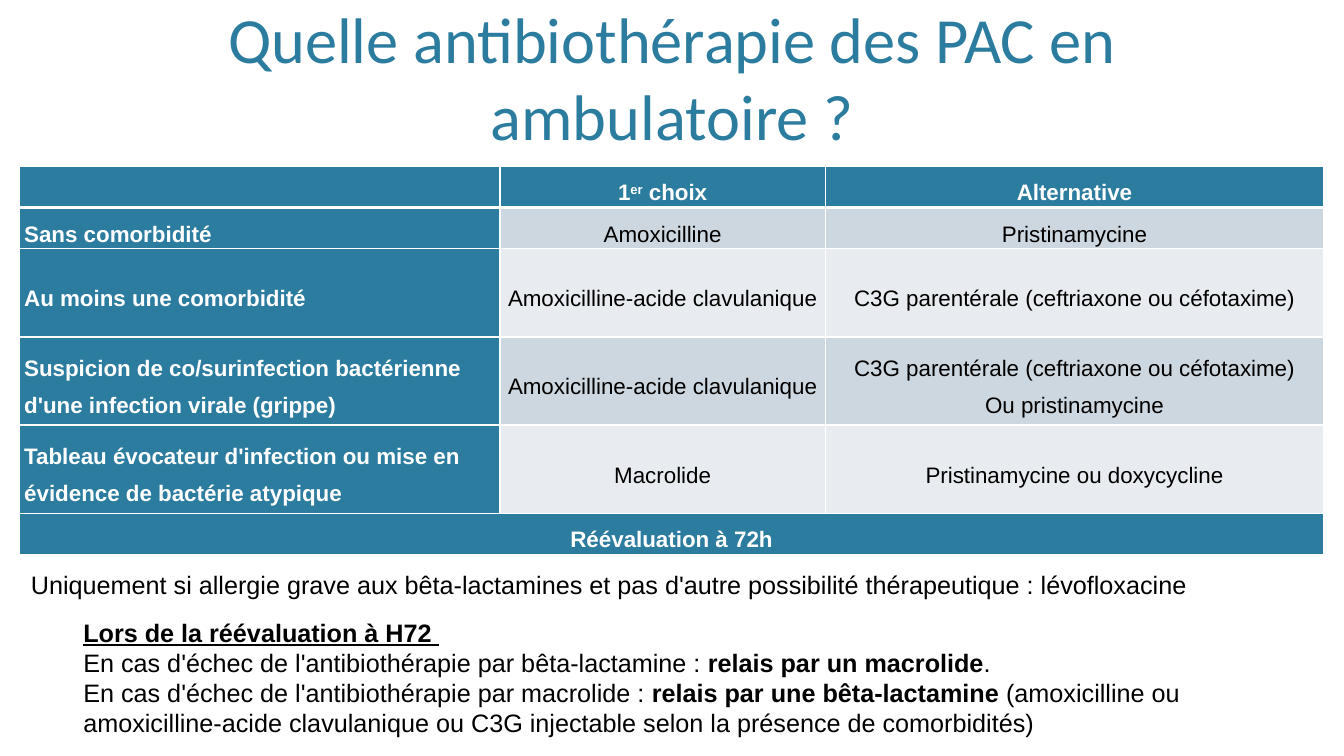
from dataclasses import dataclass

from lxml.etree import SubElement
from pptx import Presentation
from pptx.dml.color import RGBColor
from pptx.enum.text import MSO_ANCHOR, PP_ALIGN
from pptx.oxml.ns import qn
from pptx.util import Cm, Pt


@dataclass(frozen=True)
class Theme:
    teal: str = "2C7C9F"
    white: str = "FFFFFF"
    black: str = "000000"
    bands: tuple = ("CDD7DF", "E8ECF0")
    title_font: str = "Calibri"
    body_font: str = "Arial"
    title_size: int = 46
    body_size: int = 18
    table_size: int = 16


THEME = Theme()

TITLE = "Quelle antibiothérapie des PAC en ambulatoire ?"
ALLERGY_NOTE = (
    "Uniquement si allergie grave aux bêta-lactamines et pas d'autre "
    "possibilité thérapeutique : lévofloxacine"
)
# A paragraph is a list of (text, marks): b bold, u underlined, s superscript.
REASSESSMENT = [
    [("Lors de la réévaluation à H72 ", "bu")],
    [
        ("En cas d'échec de l'antibiothérapie par bêta-lactamine : ", ""),
        ("relais par un macrolide", "b"),
        (".", ""),
    ],
    [
        ("En cas d'échec de l'antibiothérapie par macrolide : ", ""),
        ("relais par une bêta-lactamine ", "b"),
        ("(amoxicilline ou amoxicilline-acide clavulanique ou C3G injectable "
         "selon la présence de comorbidités)", ""),
    ],
]

HEADINGS = [[], [[("1", "b"), ("er", "bs"), (" choix", "b")]], [[("Alternative", "b")]]]
TREATMENTS = [
    ("Sans comorbidité", "Amoxicilline", "Pristinamycine"),
    ("Au moins une comorbidité", "Amoxicilline-acide clavulanique",
     "C3G parentérale (ceftriaxone ou céfotaxime)"),
    ("Suspicion de co/surinfection bactérienne d'une infection virale (grippe)",
     "Amoxicilline-acide clavulanique",
     "C3G parentérale (ceftriaxone ou céfotaxime)\nOu pristinamycine"),
    ("Tableau évocateur d'infection ou mise en évidence de bactérie atypique",
     "Macrolide", "Pristinamycine ou doxycycline"),
]
FOOTER = "Réévaluation à 72h"
COLUMN_WIDTHS = (12.11, 8.2, 12.56)
SHORT_ROW, TALL_ROW = 1.04, 2.22
ROW_HEIGHTS = (SHORT_ROW, SHORT_ROW, TALL_ROW, TALL_ROW, TALL_ROW, SHORT_ROW)
THIN, THICK = 1, 3


def plain(text, marks=""):
    return [[(line, marks)] for line in text.split("\n")]


def write_paragraphs(frame, paragraphs, font, size, color, align=PP_ALIGN.LEFT, spacing=1.0):
    for index, pieces in enumerate(paragraphs):
        para = frame.add_paragraph() if index else frame.paragraphs[0]
        para.alignment = align
        para.line_spacing = spacing
        for text, marks in pieces:
            span = para.add_run()
            span.text = text
            span.font.name = font
            span.font.size = Pt(size)
            span.font.color.rgb = RGBColor.from_string(color)
            span.font.bold = "b" in marks
            span.font.underline = "u" in marks
            if "s" in marks:
                span._r.get_or_add_rPr().set("baseline", "30000")


def add_text(page, place, paragraphs, font=THEME.body_font, size=THEME.body_size,
             color=THEME.black, align=PP_ALIGN.LEFT, anchor=MSO_ANCHOR.TOP):
    box = page.shapes.add_textbox(*(Cm(length) for length in place))
    box.text_frame.word_wrap = True
    box.text_frame.vertical_anchor = anchor
    write_paragraphs(box.text_frame, paragraphs, font, size, color, align)


def set_borders(cell, top, bottom):
    properties = cell._tc.get_or_add_tcPr()
    for side, width in (("L", THIN), ("R", THIN), ("T", top), ("B", bottom)):
        line = SubElement(properties, qn(f"a:ln{side}"), w=str(Pt(width)))
        fill = SubElement(line, qn("a:solidFill"))
        SubElement(fill, qn("a:srgbClr"), val=THEME.white)


def fill_cell(cell, paragraphs, fill, color, align=PP_ALIGN.CENTER, top=THIN, bottom=THIN):
    set_borders(cell, top, bottom)
    cell.fill.solid()
    cell.fill.fore_color.rgb = RGBColor.from_string(fill)
    cell.margin_left = cell.margin_right = Cm(0.12)
    cell.margin_top = cell.margin_bottom = 0
    cell.vertical_anchor = MSO_ANCHOR.MIDDLE
    write_paragraphs(cell.text_frame, paragraphs, THEME.body_font, THEME.table_size,
                     color, align, spacing=1.5)


def add_treatment_table(page, left, top):
    frame = page.shapes.add_table(
        len(ROW_HEIGHTS), len(COLUMN_WIDTHS), Cm(left), Cm(top),
        Cm(sum(COLUMN_WIDTHS)), Cm(sum(ROW_HEIGHTS)))
    table = frame.table
    for column, width in zip(table.columns, COLUMN_WIDTHS):
        column.width = Cm(width)
    for row, height in zip(table.rows, ROW_HEIGHTS):
        row.height = Cm(height)

    for column, heading in enumerate(HEADINGS):
        fill_cell(table.cell(0, column), heading, THEME.teal, THEME.white, bottom=THICK)

    for row, (situation, *choices) in enumerate(TREATMENTS, start=1):
        top_line = THICK if row == 1 else THIN
        fill_cell(table.cell(row, 0), plain(situation, "b"), THEME.teal, THEME.white,
                  PP_ALIGN.LEFT, top_line)
        band = THEME.bands[(row - 1) % 2]
        for column, choice in enumerate(choices, start=1):
            fill_cell(table.cell(row, column), plain(choice), band, THEME.black, top=top_line)

    last = len(ROW_HEIGHTS) - 1
    table.cell(last, 0).merge(table.cell(last, len(COLUMN_WIDTHS) - 1))
    fill_cell(table.cell(last, 0), plain(FOOTER, "b"), THEME.teal, THEME.white)


def main():
    deck = Presentation()
    deck.slide_width, deck.slide_height = Cm(33.87), Cm(19.05)
    page = deck.slides.add_slide(deck.slide_layouts[6])
    add_text(page, (2.03, 0.3, 29.8, 3.7), plain(TITLE), THEME.title_font,
             THEME.title_size, THEME.teal, PP_ALIGN.CENTER, MSO_ANCHOR.BOTTOM)
    add_text(page, (1.85, 15.42, 31.57, 3.33), REASSESSMENT)
    add_treatment_table(page, 0.49, 4.19)
    add_text(page, (0.53, 14.22, 32.33, 1.02), plain(ALLERGY_NOTE))
    deck.save("out.pptx")


if __name__ == "__main__":
    main()
